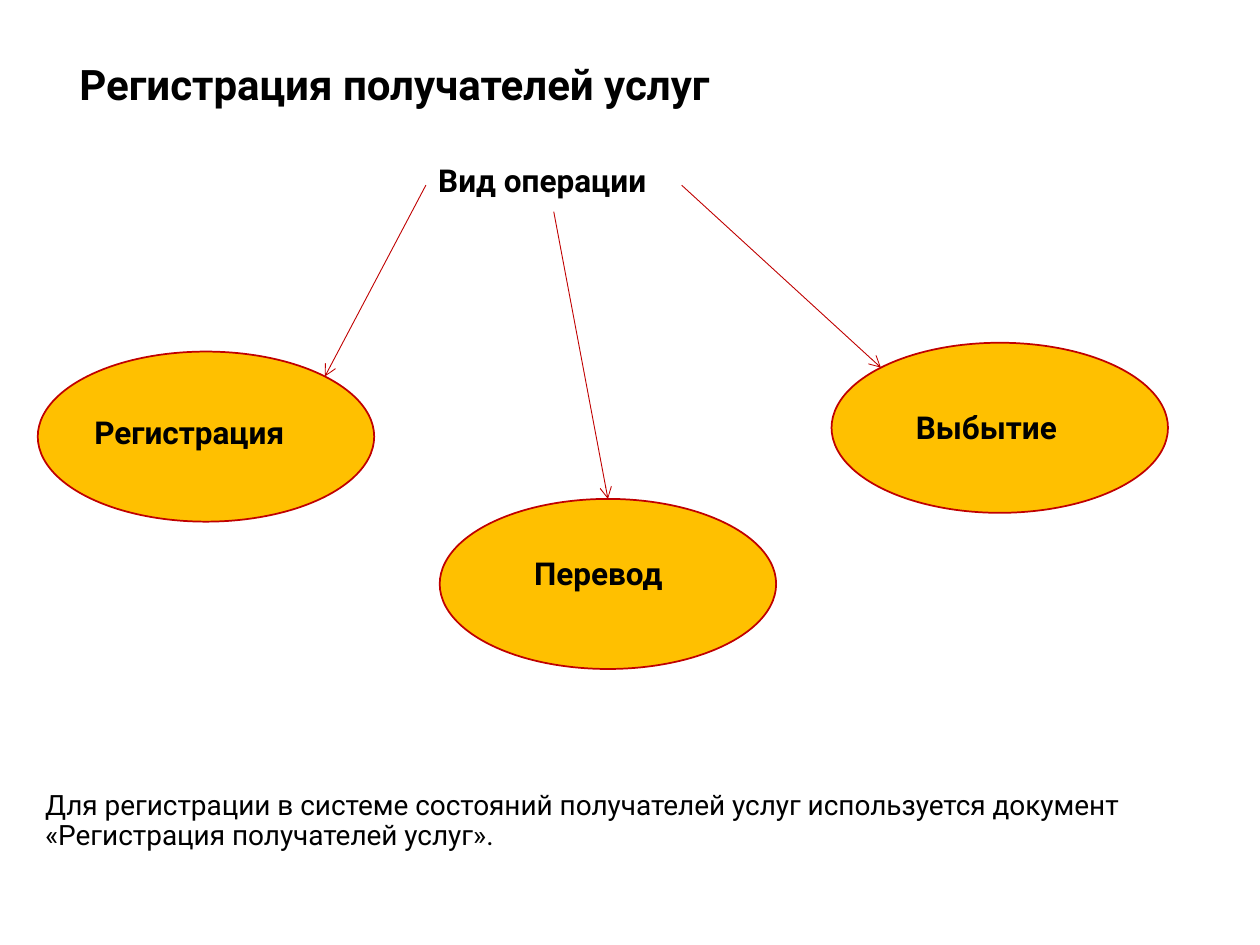
from dataclasses import dataclass
from math import sqrt

from lxml import etree
from pptx import Presentation
from pptx.dml.color import RGBColor
from pptx.enum.shapes import MSO_CONNECTOR, MSO_SHAPE
from pptx.enum.text import MSO_ANCHOR, MSO_AUTO_SIZE, PP_ALIGN
from pptx.oxml.ns import qn
from pptx.shapes.autoshape import Shape
from pptx.slide import Slide
from pptx.util import Inches, Pt

STRAIGHT = MSO_CONNECTOR.STRAIGHT
ELLIPSE = MSO_SHAPE.OVAL
TOP = MSO_ANCHOR.TOP
LEFT = PP_ALIGN.LEFT
NO_AUTOSIZE = MSO_AUTO_SIZE.NONE

TITLE_ONLY_LAYOUT = 5
SIDE_TOP, SIDE_LEFT, SIDE_BOTTOM, SIDE_RIGHT = range(4)


@dataclass(frozen=True)
class Theme:
    font: str = "Roboto"
    text: RGBColor = RGBColor(0x00, 0x00, 0x00)
    fill: RGBColor = RGBColor(0xFF, 0xC0, 0x00)
    line: RGBColor = RGBColor(0xC0, 0x00, 0x00)
    title_size: int = 24
    label_size: int = 18
    body_size: int = 16
    outline_width: float = 1
    arrow_width: float = 0.5
    line_spacing: float = 0.9


@dataclass(frozen=True)
class Box:
    left: float
    top: float
    width: float
    height: float


@dataclass(frozen=True)
class Operation:
    name: str
    left: float
    top: float
    label: Box
    source_side: int  # side of the heading where the arrow starts
    direction: int  # arrow end on the ellipse: -1 upper left, 0 top, 1 upper right


THEME = Theme()
ELLIPSE_WIDTH, ELLIPSE_HEIGHT = 2.67, 1.35
HEADING_BOX = Box(3.38, 1.26, 2.03, 0.42)
OPERATIONS = [
    Operation("Регистрация", 0.3, 2.79, Box(0.65, 3.26, 2.03, 0.42), SIDE_LEFT, 1),
    Operation("Перевод", 3.49, 3.96, Box(4.14, 4.38, 1.37, 0.42), SIDE_BOTTOM, 0),
    Operation("Выбытие", 6.6, 2.72, Box(7.17, 3.22, 1.48, 0.42), SIDE_RIGHT, -1),
]


def write_text(shape: Shape, text: str, size: int, bold: bool) -> None:
    frame = shape.text_frame
    frame.text = text
    frame.word_wrap = True
    frame.auto_size = NO_AUTOSIZE
    frame.vertical_anchor = TOP
    paragraph = frame.paragraphs[0]
    paragraph.alignment = LEFT
    paragraph.line_spacing = THEME.line_spacing
    paragraph.space_before = Pt(0)
    font = paragraph.font
    font.name = THEME.font
    font.size = Pt(size)
    font.bold = bold
    font.color.rgb = THEME.text


def add_text(slide: Slide, box: Box, text: str, size: int, bold: bool) -> Shape:
    shape = slide.shapes.add_textbox(
        Inches(box.left), Inches(box.top), Inches(box.width), Inches(box.height))
    write_text(shape, text, size, bold)
    return shape


def add_ellipse(slide: Slide, operation: Operation) -> Shape:
    shape = slide.shapes.add_shape(
        ELLIPSE, Inches(operation.left), Inches(operation.top),
        Inches(ELLIPSE_WIDTH), Inches(ELLIPSE_HEIGHT))
    shape.shadow.inherit = False
    shape.fill.solid()
    shape.fill.fore_color.rgb = THEME.fill
    shape.line.color.rgb = THEME.line
    shape.line.width = Pt(THEME.outline_width)
    return shape


def add_arrow(slide: Slide, heading: Shape, ellipse: Shape, operation: Operation) -> None:
    # Diagonal arrows meet the ellipse at 45 degrees, the middle one at its top
    shift = operation.direction / sqrt(2)
    rise = sqrt(1 - shift ** 2)
    end_x = operation.left + ELLIPSE_WIDTH / 2 * (1 + shift)
    end_y = operation.top + ELLIPSE_HEIGHT / 2 * (1 - rise)
    arrow = slide.shapes.add_connector(
        STRAIGHT, heading.left, heading.top, Inches(end_x), Inches(end_y))
    arrow.begin_connect(heading, operation.source_side)
    if operation.direction == 0:
        arrow.end_connect(ellipse, SIDE_TOP)
    arrow.line.color.rgb = THEME.line
    arrow.line.width = Pt(THEME.arrow_width)
    etree.SubElement(arrow.line._get_or_add_ln(), qn("a:tailEnd"), type="arrow")
    etree.SubElement(arrow._element.spPr, qn("a:effectLst"))


def main() -> None:
    presentation = Presentation()
    presentation.slide_width = Inches(10)
    presentation.slide_height = Inches(7.5)
    slide = presentation.slides.add_slide(presentation.slide_layouts[TITLE_ONLY_LAYOUT])

    # Title
    title = slide.shapes.title
    title.left, title.top = Inches(0.53), Inches(0.46)
    title.width, title.height = Inches(8.98), Inches(0.63)
    write_text(title, "Регистрация получателей услуг", THEME.title_size, True)

    # Explanation at the bottom
    add_text(
        slide, Box(0.26, 6.23, 9.59, 0.61),
        "Для регистрации в системе состояний получателей услуг используется документ "
        "«Регистрация получателей услуг».",
        THEME.body_size, False)

    # Heading with its three operations
    heading = add_text(slide, HEADING_BOX, "Вид операции", THEME.label_size, True)
    for operation in OPERATIONS:
        ellipse = add_ellipse(slide, operation)
        add_arrow(slide, heading, ellipse, operation)
        add_text(slide, operation.label, operation.name, THEME.label_size, True)

    presentation.save("out.pptx")


if __name__ == "__main__":
    main()
